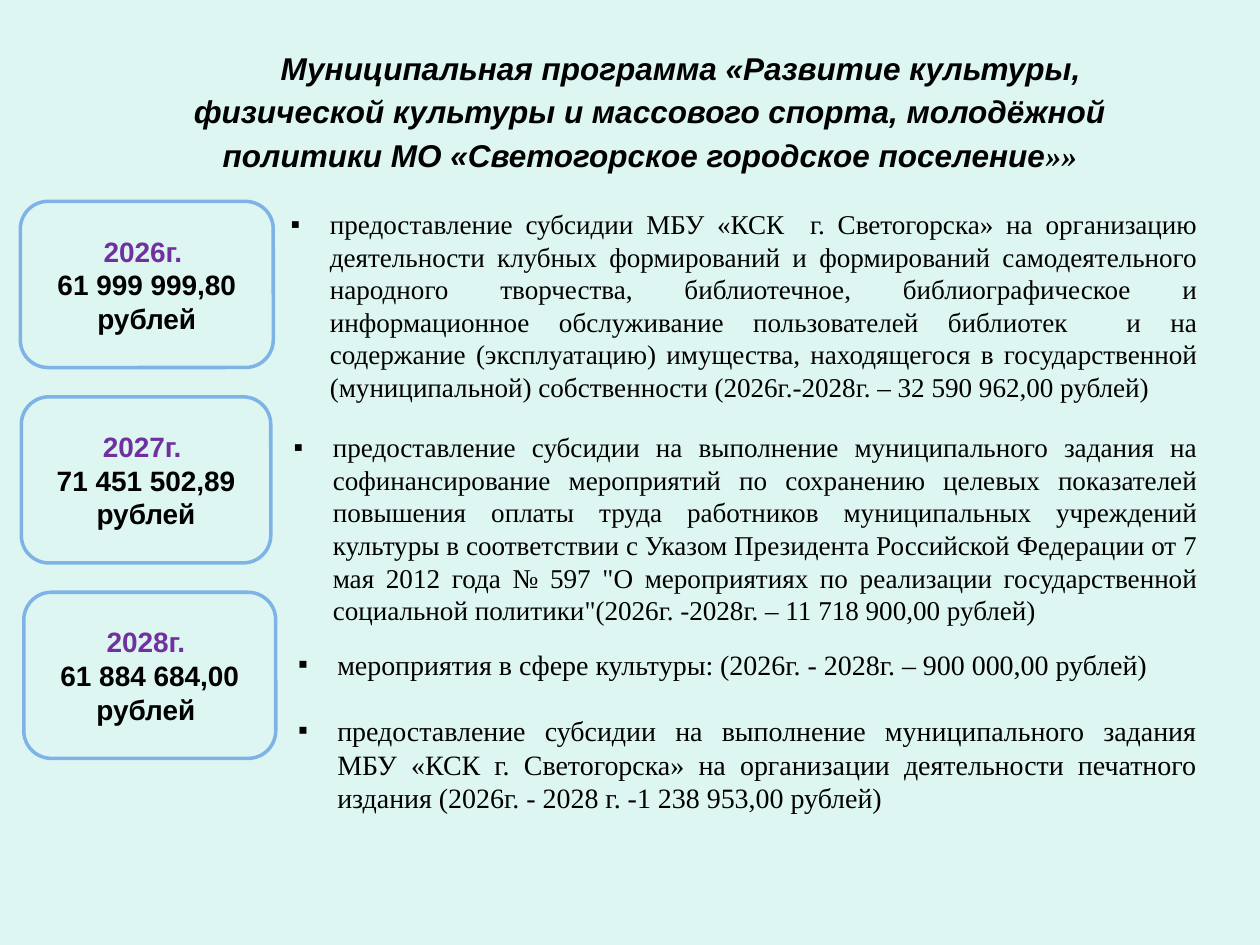
import pptx
import pptx.dml.color
import pptx.enum.shapes
import pptx.enum.text
import pptx.util
from lxml import etree
from pptx.util import Cm, Pt

BACKGROUND, OUTLINE, PURPLE, BLACK = "DEF6F1", "7FB3E7", "7030A0", "000000"
SANS, SERIF = "Arial", "Times New Roman"

TITLE = [
    ("Муниципальная программа «Развитие культуры, физической культуры и массового "
     "спорта, молодёжной политики МО «Светогорское городское поселение", SANS),
    ("»»", SERIF),
]

# left and width in cm, year, amount
YEARS = [
    (0.41, 5.1, "2026г. ", "61 999 999,80 рублей"),
    (0.43, 5.03, "2027г. ", "71 451 502,89 рублей"),
    (0.48, 5.08, "2028г. ", "61 884 684,00 рублей "),
]
YEAR_TOP, YEAR_STEP, YEAR_HEIGHT = 4.06, 3.94, 3.35

# left, top, height in cm, text size, items
MEASURES = [
    (5.61, 4.06, 4.24, 15.5, [
        "предоставление субсидии МБУ «КСК  г. Светогорска» на организацию деятельности "
        "клубных формирований и формирований самодеятельного народного творчества, "
        "библиотечное, библиографическое и информационное обслуживание пользователей "
        "библиотек  и на содержание (эксплуатацию) имущества, находящегося в "
        "государственной (муниципальной) собственности (2026г.-2028г. – "
        "32 590 962,00 рублей)"]),
    (5.67, 8.56, 4.24, 15.5, [
        "предоставление субсидии на выполнение муниципального задания на "
        "софинансирование мероприятий по сохранению целевых показателей повышения "
        "оплаты труда работников муниципальных учреждений культуры в соответствии с "
        "Указом Президента Российской Федерации от 7 мая 2012 года № 597 "
        "\"О мероприятиях по реализации государственной социальной политики\""
        "(2026г. -2028г. – 11 718 900,00 рублей)"]),
    (5.76, 12.93, 3.68, 16, [
        "мероприятия в сфере культуры: (2026г. - 2028г. – 900 000,00 рублей)",
        "предоставление субсидии на выполнение муниципального задания МБУ «КСК "
        "г. Светогорска» на организации деятельности печатного издания "
        "(2026г. - 2028 г. -1 238 953,00 рублей)"]),
]
MEASURES_RIGHT = 24.38
ITEM_GAP = 18.5


def color(value):
    return pptx.dml.color.RGBColor.from_string(value)


def fill_solid(fill, value):
    fill.solid()
    fill.fore_color.rgb = color(value)


def set_indent(paragraph, margin, first_line):
    properties = paragraph._p.get_or_add_pPr()
    properties.set("marL", str(Cm(margin)))
    properties.set("indent", str(Cm(first_line)))
    return properties


def add_bullet(paragraph):
    properties = set_indent(paragraph, 0.79, -0.79)
    for tag, attribute, value in (("buFont", "typeface", SANS), ("buChar", "char", "▪")):
        etree.SubElement(properties, pptx.oxml.ns.qn("a:" + tag)).set(attribute, value)


def add_title(slide):
    title = slide.shapes.title
    title.left, title.top, title.width, title.height = Cm(2.9), Cm(0.74), Cm(20.4), Cm(2.84)
    frame = title.text_frame
    frame.word_wrap = True
    frame.auto_size = pptx.enum.text.MSO_AUTO_SIZE.NONE
    frame.vertical_anchor = pptx.enum.text.MSO_ANCHOR.TOP
    paragraph = frame.paragraphs[0]
    set_indent(paragraph, 0, 1.25)
    paragraph.alignment = pptx.enum.text.PP_ALIGN.CENTER
    paragraph.line_spacing = 1.15
    paragraph.space_after = Pt(10)
    paragraph.font.size = Pt(18)
    paragraph.font.bold = paragraph.font.italic = True
    paragraph.font.color.rgb = color(BLACK)
    for text, font_name in TITLE:
        run = paragraph.add_run()
        run.text = text
        run.font.name = font_name


def add_year(slide, left, top, width, year, amount):
    shape = slide.shapes.add_shape(
        pptx.enum.shapes.MSO_SHAPE.ROUNDED_RECTANGLE,
        Cm(left), Cm(top), Cm(width), Cm(YEAR_HEIGHT))
    shape.shadow.inherit = False
    fill_solid(shape.fill, BACKGROUND)
    shape.line.color.rgb = color(OUTLINE)
    shape.line.width = Pt(2)
    shape.text_frame.vertical_anchor = pptx.enum.text.MSO_ANCHOR.MIDDLE
    paragraph = shape.text_frame.paragraphs[0]
    paragraph.alignment = pptx.enum.text.PP_ALIGN.CENTER
    paragraph.font.name = SANS
    paragraph.font.size = Pt(16)
    paragraph.font.bold = True
    year_run = paragraph.add_run()
    year_run.text = year
    year_run.font.color.rgb = color(PURPLE)
    paragraph.add_line_break()
    amount_run = paragraph.add_run()
    amount_run.text = amount
    amount_run.font.color.rgb = color(BLACK)


def add_measures(slide, left, top, height, size, items):
    box = slide.shapes.add_textbox(Cm(left), Cm(top), Cm(MEASURES_RIGHT - left), Cm(height))
    frame = box.text_frame
    frame.word_wrap = True
    for index, item in enumerate(items):
        paragraph = frame.add_paragraph() if index else frame.paragraphs[0]
        paragraph.text = item
        add_bullet(paragraph)
        paragraph.alignment = pptx.enum.text.PP_ALIGN.JUSTIFY
        if index:
            paragraph.space_before = Pt(ITEM_GAP)
        paragraph.font.name = SERIF
        paragraph.font.size = Pt(size)
        paragraph.font.color.rgb = color(BLACK)


def main():
    presentation = pptx.Presentation()
    presentation.slide_width, presentation.slide_height = Cm(25.4), Cm(19.05)
    slide = presentation.slides.add_slide(presentation.slide_layouts[5])
    fill_solid(slide.background.fill, BACKGROUND)
    add_title(slide)
    for index, (left, width, year, amount) in enumerate(YEARS):
        add_year(slide, left, YEAR_TOP + index * YEAR_STEP, width, year, amount)
    for measure in MEASURES:
        add_measures(slide, *measure)
    presentation.save("out.pptx")


if __name__ == "__main__":
    main()
